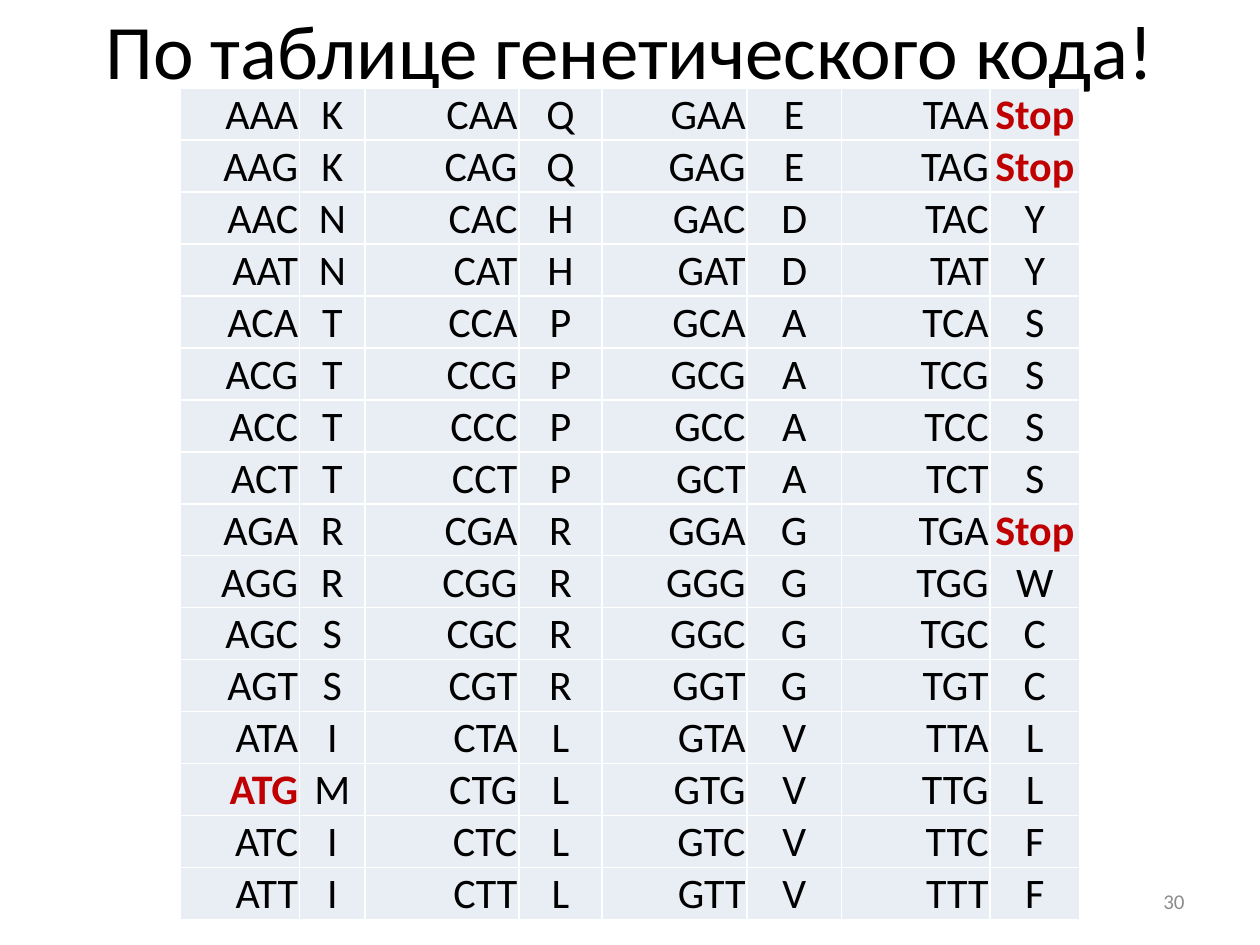
import pptx
import pptx.dml.color
import pptx.enum.text
import pptx.oxml
import pptx.oxml.ns
import pptx.util
from pptx.dml.color import RGBColor
from pptx.enum.text import MSO_ANCHOR, PP_ALIGN
from pptx.util import Cm

BLACK = RGBColor(0x00, 0x00, 0x00)
GREY = RGBColor(0x8C, 0x8C, 0x8C)
RED = RGBColor(0xC0, 0x00, 0x00)
WHITE = RGBColor(0xFF, 0xFF, 0xFF)
PALE_BLUE = RGBColor(0xE9, 0xED, 0xF4)

SECOND_BASES = "ACGT"
THIRD_BASES = "AGCT"
# Amino acids by first base, in the order of the second and third; * is a stop.
AMINO_ACIDS = {
    "A": "KKNNTTTTRRSSIMII",
    "C": "QQHHPPPPRRRRLLLL",
    "G": "EEDDAAAAGGGGVVVV",
    "T": "**YYSSSS*WCCLLFF",
}
HIGHLIGHTED = ("ATG", "Stop")
COLUMN_WIDTHS = (2.41, 1.32, 3.1, 1.68, 2.92, 1.9, 3, 1.8)


def codon_rows():
    """Return rows that alternate codon and amino acid for each first base."""
    endings = [second + third for second in SECOND_BASES for third in THIRD_BASES]
    rows = []
    for index, ending in enumerate(endings):
        row = []
        for first, acids in AMINO_ACIDS.items():
            row += [first + ending, acids[index].replace("*", "Stop")]
        rows.append(row)
    return rows


class SlideBuilder:
    font_name = "Calibri"
    cell_size = 24
    border_width = 1

    def __init__(self, slide):
        self.slide = slide

    def style(self, paragraph, size, color, align, bold=False):
        paragraph.alignment = align
        paragraph.font.name = self.font_name
        paragraph.font.size = pptx.util.Pt(size)
        paragraph.font.color.rgb = color
        paragraph.font.bold = bold

    def text(self, content, left, top, width, height, size, color, align):
        frame = self.slide.shapes.add_textbox(
            Cm(left), Cm(top), Cm(width), Cm(height)).text_frame
        frame.word_wrap = True
        frame.vertical_anchor = MSO_ANCHOR.MIDDLE
        frame.text = content
        self.style(frame.paragraphs[0], size, color, align)

    def border(self, cell):
        properties = cell._tc.get_or_add_tcPr()
        for side in ("lnL", "lnR", "lnT", "lnB"):
            properties.append(pptx.oxml.parse_xml(
                f'<a:{side} {pptx.oxml.ns.nsdecls("a")} '
                f'w="{pptx.util.Pt(self.border_width)}">'
                f'<a:solidFill><a:srgbClr val="{WHITE}"/></a:solidFill></a:{side}>'))

    def cell(self, cell, content, align):
        cell.margin_left = cell.margin_right = cell.margin_top = Cm(0.03)
        cell.margin_bottom = 0
        cell.vertical_anchor = MSO_ANCHOR.BOTTOM
        self.border(cell)
        cell.fill.solid()
        cell.fill.fore_color.rgb = PALE_BLUE
        cell.text = content
        marked = content in HIGHLIGHTED
        self.style(cell.text_frame.paragraphs[0], self.cell_size,
                   RED if marked else BLACK, align, marked)

    def codon_table(self, rows, left, top, height):
        table = self.slide.shapes.add_table(
            len(rows), len(COLUMN_WIDTHS), Cm(left), Cm(top),
            Cm(sum(COLUMN_WIDTHS)), Cm(height)).table
        table.first_row = table.horz_banding = False
        for column, width in zip(table.columns, COLUMN_WIDTHS):
            column.width = Cm(width)
        for row_index, row in enumerate(rows):
            for column_index, content in enumerate(row):
                align = PP_ALIGN.CENTER if column_index % 2 else PP_ALIGN.RIGHT
                self.cell(table.cell(row_index, column_index), content, align)


def main():
    presentation = pptx.Presentation()
    presentation.slide_width = Cm(25.4)
    presentation.slide_height = Cm(19.05)
    builder = SlideBuilder(
        presentation.slides.add_slide(presentation.slide_layouts[6]))
    builder.text("По таблице генетического кода!", 1.27, -0.61, 22.86, 3.18,
                 44, BLACK, PP_ALIGN.CENTER)
    builder.text("30", 18.21, 17.65, 5.92, 1.02, 12, GREY, PP_ALIGN.RIGHT)
    builder.codon_table(codon_rows(), 3.63, 1.78, 16.69)
    presentation.save("out.pptx")


if __name__ == "__main__":
    main()
